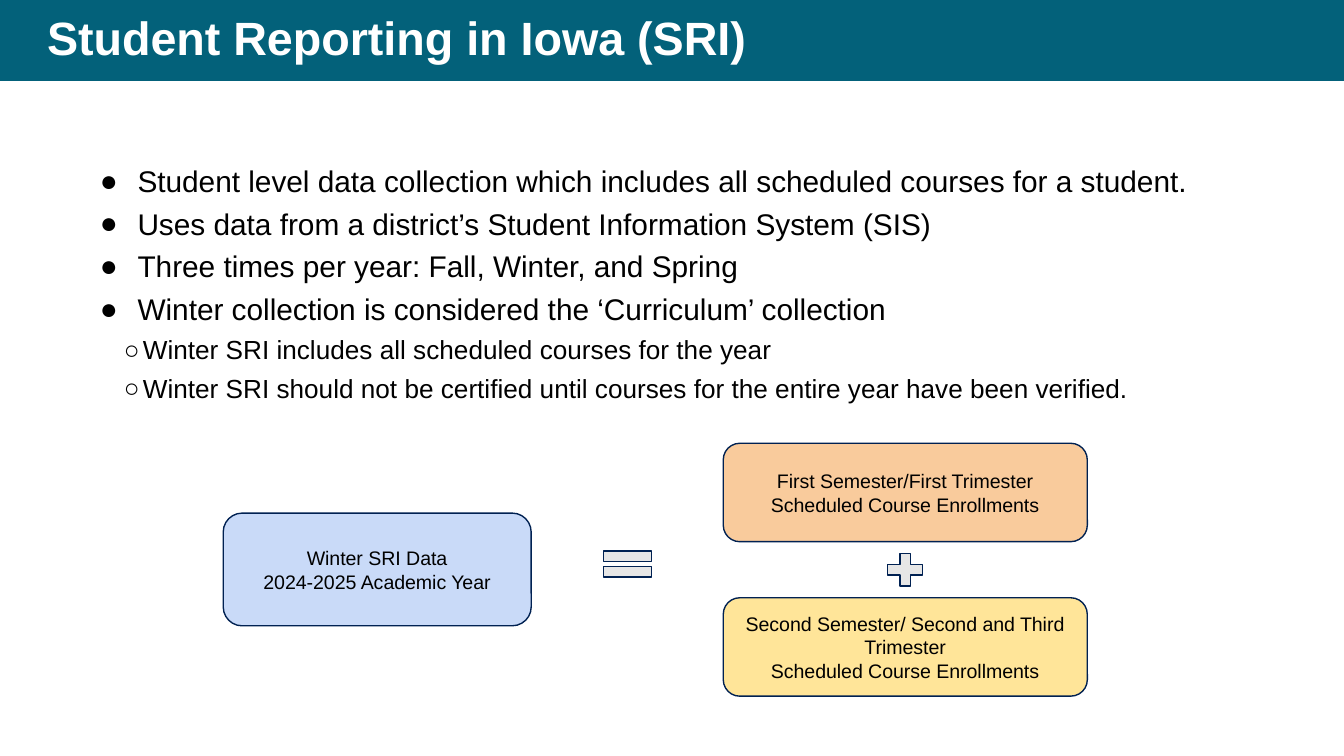
"""Build the Student Reporting in Iowa slide."""
from lxml.etree import SubElement
from pptx import Presentation
from pptx.dml.color import RGBColor
from pptx.enum.shapes import MSO_SHAPE
from pptx.enum.text import MSO_ANCHOR, PP_ALIGN
from pptx.oxml.ns import qn
from pptx.util import Cm, Pt

BULLETS = [
    (0, "Student level data collection which includes all scheduled courses for a student."),
    (0, "Uses data from a district’s Student Information System (SIS)"),
    (0, "Three times per year: Fall, Winter, and Spring"),
    (0, "Winter collection is considered the ‘Curriculum’ collection"),
    (1, "Winter SRI includes all scheduled courses for the year"),
    (1, "Winter SRI should not be certified until courses for the entire year have been verified."),
]
LEVELS = [("●", 16, 0.97, -0.71), ("○", 14, 1.07, -0.36)]
SEMESTERS = [
    (8.38, "F9CB9C", "First Semester/First Trimester\nScheduled Course Enrollments"),
    (11.3, "FFE599", "Second Semester/ Second and Third Trimester\nScheduled Course Enrollments"),
]


def color(code):
    return RGBColor.from_string(code)


class SlideBuilder:
    font = "Arial"
    ink = "000000"
    outline = "002152"

    def __init__(self, page):
        self.page = page

    def format_runs(self, para, size, code, bold=False):
        for span in para.runs:
            span.font.name = self.font
            span.font.size = Pt(size)
            span.font.bold = bold
            span.font.color.rgb = color(code)

    def set_margins(self, frame, side, end):
        frame.word_wrap = True
        frame.margin_left = frame.margin_right = Cm(side)
        frame.margin_top = frame.margin_bottom = Cm(end)

    def shape(self, kind, left, top, width, height, fill, outlined=True):
        shape = self.page.shapes.add_shape(kind, Cm(left), Cm(top), Cm(width), Cm(height))
        shape.shadow.inherit = False
        shape.fill.solid()
        shape.fill.fore_color.rgb = color(fill)
        if outlined:
            shape.line.color.rgb = color(self.outline)
            shape.line.width = Pt(0.75)
        else:
            shape.line.fill.background()
        return shape

    def card(self, left, top, width, height, fill, text):
        box = self.shape(MSO_SHAPE.ROUNDED_RECTANGLE, left, top, width, height, fill)
        frame = box.text_frame
        self.set_margins(frame, 0.18, 0.18)
        frame.vertical_anchor = MSO_ANCHOR.MIDDLE
        frame.text = text
        for para in frame.paragraphs:
            para.alignment = PP_ALIGN.CENTER
            self.format_runs(para, 10.5, self.ink)

    def text_frame(self, left, top, width, height):
        box = self.page.shapes.add_textbox(Cm(left), Cm(top), Cm(width), Cm(height))
        self.set_margins(box.text_frame, 0.18, 0.1)
        return box.text_frame

    def title(self, text):
        self.shape(MSO_SHAPE.RECTANGLE, 0, 0, 25.4, 1.53, "03617A", outlined=False)
        frame = self.text_frame(0.71, 0, 23.47, 1.53)
        frame.vertical_anchor = MSO_ANCHOR.MIDDLE
        frame.text = text
        para = frame.paragraphs[0]
        para.line_spacing = 0.9
        self.format_runs(para, 25, "FFFFFF", bold=True)

    def bullet_list(self, left, top, width, height, items):
        frame = self.text_frame(left, top, width, height)
        frame.text = "\n".join(text for _, text in items)
        for index, (para, (level, _)) in enumerate(zip(frame.paragraphs, items)):
            symbol, size, margin, indent = LEVELS[level]
            para.level = level
            para.line_spacing = 0.9
            para.space_before = Pt(5.6 if index else 0)
            self.add_bullet(para, symbol, margin, indent)
            self.format_runs(para, size, self.ink)

    def add_bullet(self, para, symbol, margin, indent):
        properties = para._p.get_or_add_pPr()
        properties.set("marL", str(Cm(margin)))
        properties.set("indent", str(Cm(indent)))
        bullet_color = SubElement(properties, qn("a:buClr"))
        SubElement(bullet_color, qn("a:srgbClr"), val=self.ink)
        SubElement(properties, qn("a:buFont"), typeface=self.font)
        SubElement(properties, qn("a:buChar"), char=symbol)


def main():
    deck = Presentation()
    deck.slide_width, deck.slide_height = Cm(25.4), Cm(14.29)
    builder = SlideBuilder(deck.slides.add_slide(deck.slide_layouts[6]))
    builder.title("Student Reporting in Iowa (SRI)")
    builder.bullet_list(1.45, 3.05, 22.53, 9.07, BULLETS)
    for top, fill, text in SEMESTERS:
        builder.card(13.67, top, 6.88, 1.86, fill, text)
    builder.card(4.22, 9.7, 5.82, 2.13, "C9DAF8", "Winter SRI Data\n2024-2025 Academic Year")
    builder.shape(MSO_SHAPE.MATH_PLUS, 16.66, 10.35, 0.9, 0.84, "E6E6E6")
    builder.shape(MSO_SHAPE.MATH_EQUAL, 11.25, 10.24, 1.22, 0.84, "E6E6E6")
    deck.save("out.pptx")


if __name__ == "__main__":
    main()
